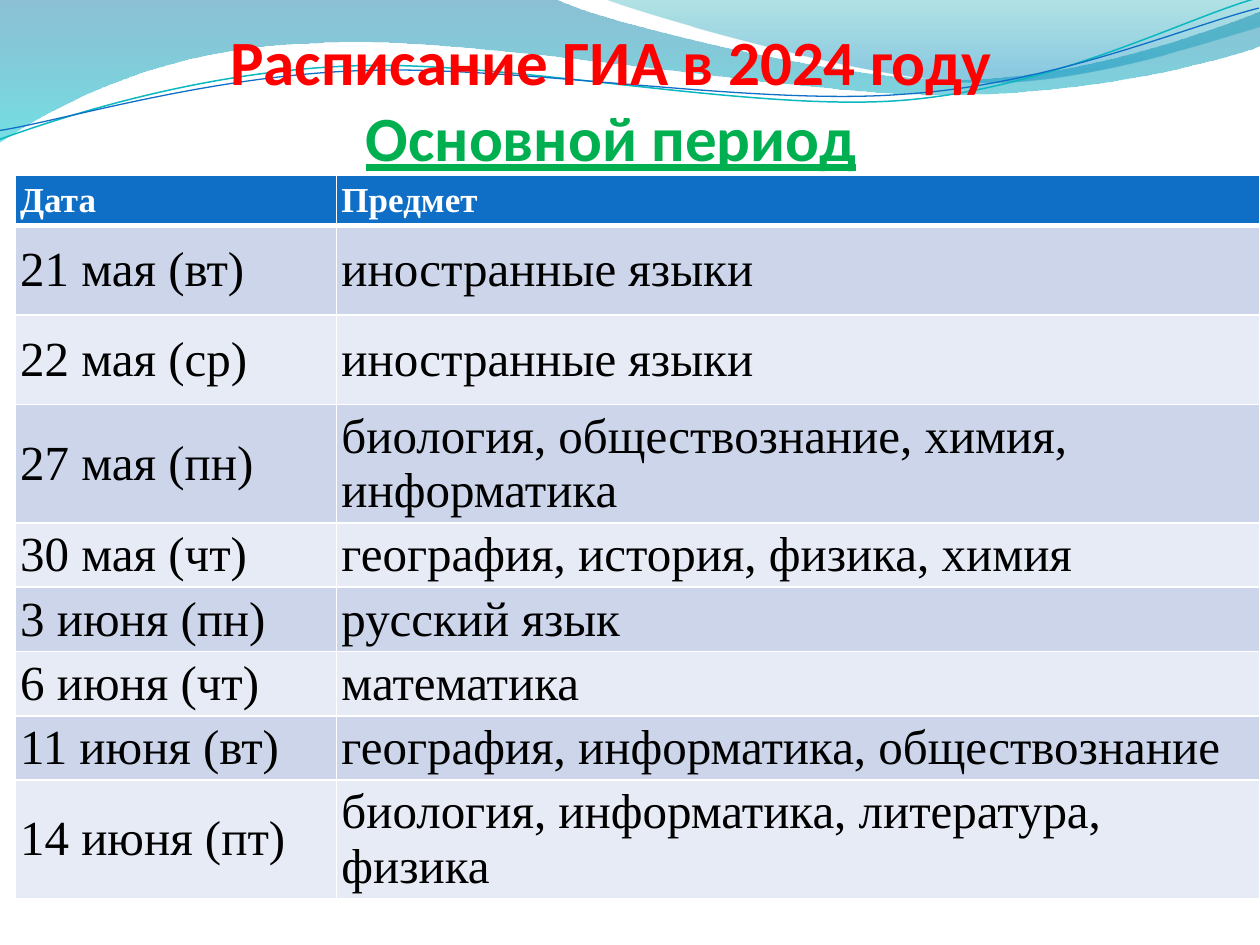
from lxml import etree
from pptx import Presentation
from pptx import util as u
from pptx.dml.color import RGBColor
from pptx.enum import text
from pptx.oxml.ns import qn

PX = u.Inches(1) // 100

WHITE = RGBColor(0xFF, 0xFF, 0xFF)
BLACK = RGBColor(0x00, 0x00, 0x00)
RED = RGBColor(0xFF, 0x00, 0x00)
GREEN = RGBColor(0x00, 0xB0, 0x50)
BLUE = RGBColor(0x0F, 0x6F, 0xC6)
TEAL = RGBColor(0x0A, 0xB8, 0xBF)
DEEP_BLUE = RGBColor(0x00, 0x74, 0xA1)
CYAN = RGBColor(0x00, 0xC6, 0xCF)
SEA_GREEN = RGBColor(0x00, 0xA1, 0xA9)
SKY_BLUE = RGBColor(0x00, 0x8B, 0xBF)
BAND_DARK = RGBColor(0xCC, 0xD5, 0xEA)
BAND_LIGHT = RGBColor(0xE7, 0xEB, 0xF5)


def add_wave(slide, start, segments, close):
    builder = slide.shapes.build_freeform(*start, scale=PX)
    for segment in segments:
        builder.add_line_segments(segment, close=False)
    if close:
        builder.add_line_segments([], close=True)
    shape = builder.convert_to_shape()
    shape.shadow.inherit = False
    lines = iter(list(shape._element.spPr.iter(qn("a:lnTo"))))
    for segment in segments:
        first, *others = [next(lines) for point in segment]
        if others:
            first.tag = qn("a:cubicBezTo")
        for other in others:
            first.append(other[0])
            other.getparent().remove(other)
    return shape


def set_borders(cell, widths):
    properties = cell._tc.get_or_add_tcPr()
    for index, (side, points) in enumerate(widths.items()):
        line = etree.Element(qn("a:ln" + side), w=str(u.Pt(points)))
        fill = etree.SubElement(line, qn("a:solidFill"))
        etree.SubElement(fill, qn("a:srgbClr"), val=str(WHITE))
        properties.insert(index, line)


presentation = Presentation()
presentation.slide_width = 1000 * PX
presentation.slide_height = 750 * PX
slide = presentation.slides.add_slide(presentation.slide_layouts[5])

bands = [
    ((0, 0),
     [[(440, -1)],
      [(476, 17), (664, 63), (758, 63)],
      [(853, 63), (958, 26), (1000, 9)],
      [(1001, 36)],
      [(983, 44), (870, 76), (746, 75)],
      [(622, 75), (382, 28), (257, 34)],
      [(129, 36), (46, 83), (-1, 113)],
      [(0, 0)]],
     [(0, DEEP_BLUE, 45), (1, CYAN, 55)]),
    ((479, -1),
     [[(509, 11), (682, 62), (769, 65)],
      [(856, 69), (961, 32), (1000, 21)],
      [(1000, 0)],
      [(479, -1)]],
     [(0, SEA_GREEN, 30), (0.8, SKY_BLUE, 45)]),
]
for start, segments, stops in bands:
    band = add_wave(slide, start, segments, True)
    band.line.fill.background()
    band.fill.gradient()
    band.fill.gradient_angle = 270
    for stop, (position, color, opacity) in zip(band.fill.gradient_stops, stops):
        stop.position = position
        stop.color.rgb = color
    for color_element, (position, color, opacity) in zip(band._element.spPr.iter(qn("a:srgbClr")), stops):
        etree.SubElement(color_element, qn("a:alpha"), val=str(opacity * 1000))

strands = [
    ((-2, 87),
     [[(47, 72), (158, 41), (278, 42)],
      [(396, 42), (591, 93), (712, 90)],
      [(832, 87), (940, 36), (1000, 22)]],
     TEAL, 0.85),
    ((-2, 80),
     [[(46, 75), (164, 45), (283, 46)],
      [(403, 46), (596, 89), (716, 85)],
      [(835, 83), (942, 42), (1001, 30)]],
     BLUE, 0.75),
]
for start, segments, color, width in strands:
    strand = add_wave(slide, start, segments, False)
    strand.rotation = 357.3
    strand.fill.background()
    strand.line.color.rgb = color
    strand.line.width = u.Pt(width)

title = slide.shapes.title
slide.shapes._spTree.append(title._element)
title.left, title.top, title.width, title.height = 35 * PX, 13 * PX, 900 * PX, 125 * PX
frame = title.text_frame
frame.auto_size = text.MSO_AUTO_SIZE.NONE
frame.word_wrap = True
frame.vertical_anchor = text.MSO_ANCHOR.BOTTOM
frame.margin_left = frame.margin_right = frame.margin_bottom = 0
frame.margin_top = 5 * PX
paragraph = frame.paragraphs[0]
paragraph.alignment = text.PP_ALIGN.CENTER
heading = paragraph.add_run()
heading.text = "Расписание ГИА в 2024 году"
paragraph.add_line_break()
period = paragraph.add_run()
period.text = "Основной период"
period.font.underline = True
for run, color in ((heading, RED), (period, GREEN)):
    run.font.name = "Calibri"
    run.font.size = u.Pt(36)
    run.font.bold = True
    run.font.color.rgb = color

schedule = [
    ("Дата", "Предмет"),
    ("21 мая (вт)", "иностранные языки"),
    ("22 мая (ср)", "иностранные языки"),
    ("27 мая (пн)", "биология, обществознание, химия, информатика"),
    ("30 мая (чт)", "география, история, физика, химия"),
    ("3 июня (пн)", "русский язык"),
    ("6 июня (чт)", "математика"),
    ("11 июня (вт)", "география, информатика, обществознание"),
    ("14 июня (пт)", "биология, информатика, литература, физика"),
]
graphic = slide.shapes.add_table(len(schedule), 2, 12 * PX, 139 * PX, 988 * PX, 607 * PX)
table = graphic.table
for column, width in zip(table.columns, (255, 733)):
    column.width = width * PX
for index, entries in enumerate(schedule):
    table.rows[index].height = (71 if index in (1, 2) else 40) * PX
    header = index == 0
    for cell, entry in zip(table.rows[index].cells, entries):
        cell.text = entry
        cell.vertical_anchor = text.MSO_ANCHOR.MIDDLE
        cell.margin_left = cell.margin_right = cell.margin_top = cell.margin_bottom = 4 * PX
        cell.fill.solid()
        cell.fill.fore_color.rgb = BLUE if header else (BAND_LIGHT, BAND_DARK)[index % 2]
        set_borders(cell, {"L": 1, "R": 1, "T": 3 if index == 1 else 1, "B": 3 if header else 1})
        font = cell.text_frame.paragraphs[0].font
        font.name = "Times New Roman"
        font.size = u.Pt(20 if header else 28)
        font.bold = header
        font.color.rgb = WHITE if header else BLACK
graphic.height = 607 * PX

presentation.save("out.pptx")
